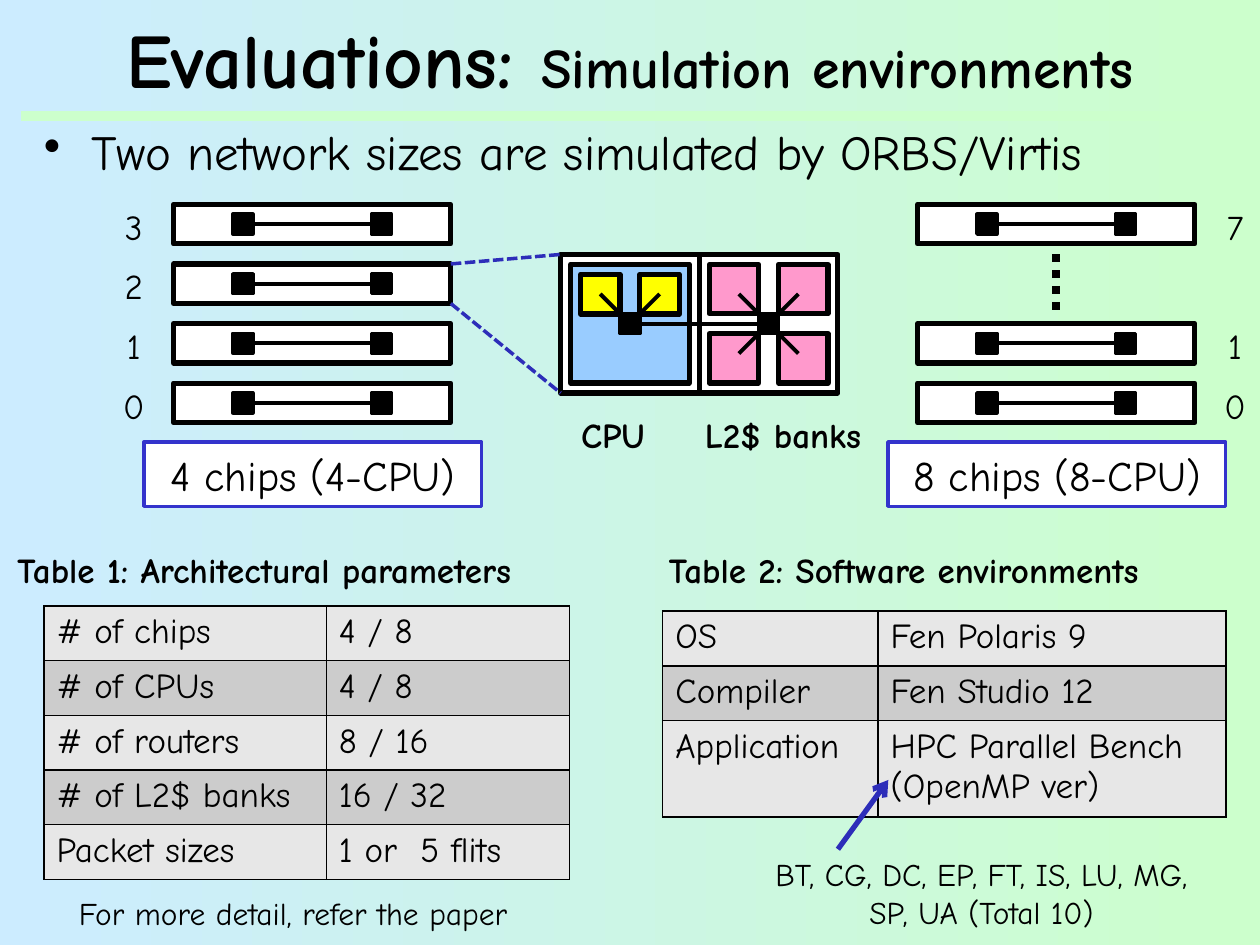
import pptx
import pptx.dml.color
import pptx.enum.dml
import pptx.enum.shapes
import pptx.enum.text
import pptx.oxml.ns
import pptx.util
from lxml import etree

Pt = pptx.util.Pt
ALIGN = pptx.enum.text.PP_ALIGN
ANCHOR = pptx.enum.text.MSO_ANCHOR
DASH = pptx.enum.dml.MSO_LINE
FONT = "Comic Neue"
BLACK, WHITE, BLUE = "000000", "FFFFFF", "2D2DB9"

CHIP_TOP, CHIP_PITCH, CHIP_WIDTH, CHIP_HEIGHT = 116.8, 34.05, 158.4, 22.6
ROUTER = 11.4
LEFT_STACK, RIGHT_STACK = 99.2, 524.4
TILE_LEFT, TILE_TOP, TILE = 320.4, 145.4, 79.2


def color(hex_string):
    return pptx.dml.color.RGBColor.from_string(hex_string)


def add_xml(parent, tag, **attributes):
    return etree.SubElement(parent, pptx.oxml.ns.qn(tag), attributes)


def set_font(paragraph, size, bold=False):
    paragraph.font.name = FONT
    paragraph.font.size = Pt(size)
    paragraph.font.bold = bold
    paragraph.font.color.rgb = color(BLACK)


def add_text(slide, text, left, top, width, height, size, bold=False, align=ALIGN.CENTER):
    box = slide.shapes.add_textbox(Pt(left), Pt(top), Pt(width), Pt(height))
    box.text_frame.word_wrap = True
    paragraph = box.text_frame.paragraphs[0]
    paragraph.text = text
    paragraph.alignment = align
    set_font(paragraph, size, bold)
    return box


def add_box(shapes, left, top, width, height, fill, line=BLACK, weight=3):
    shape = shapes.add_shape(pptx.enum.shapes.MSO_SHAPE.RECTANGLE,
                             Pt(left), Pt(top), Pt(width), Pt(height))
    shape.shadow.inherit = False
    shape.fill.solid()
    shape.fill.fore_color.rgb = color(fill)
    shape.line.color.rgb = color(line)
    shape.line.width = Pt(weight)
    return shape


def add_line(shapes, x1, y1, x2, y2, line=BLACK, weight=2.25, dash=None, arrow=False):
    connector = shapes.add_connector(pptx.enum.shapes.MSO_CONNECTOR.STRAIGHT,
                                     Pt(x1), Pt(y1), Pt(x2), Pt(y2))
    connector.line.color.rgb = color(line)
    connector.line.width = Pt(weight)
    if dash:
        connector.line.dash_style = dash
    if arrow:
        add_xml(connector.line._get_or_add_ln(), "a:tailEnd", type="arrow")
    add_xml(connector._element.spPr, "a:effectLst")


def add_router(shapes, center_x, center_y):
    add_box(shapes, center_x - ROUTER / 2, center_y - ROUTER / 2, ROUTER, ROUTER, BLACK, weight=2)


def add_chip(slide, left, top):
    shapes = slide.shapes.add_group_shape().shapes
    add_box(shapes, left, top, CHIP_WIDTH, CHIP_HEIGHT, WHITE)
    center_y = top + CHIP_HEIGHT / 2
    routers = left + CHIP_WIDTH / 4, left + CHIP_WIDTH * 3 / 4
    for center_x in routers:
        add_router(shapes, center_x, center_y)
    add_line(shapes, routers[0], center_y, routers[1], center_y)


def add_stack(slide, left, label_left, labels, caption):
    caption_box = add_box(slide.shapes, left - 17, 252.6, 193, 36.8, WHITE, "3333CC", 2)
    paragraph = caption_box.text_frame.paragraphs[0]
    paragraph.text = caption
    paragraph.alignment = ALIGN.CENTER
    set_font(paragraph, 24)
    for row, label in enumerate(labels):
        if label:
            top = CHIP_TOP + row * CHIP_PITCH
            add_chip(slide, left, top)
            add_text(slide, label, label_left, top - 3, 45, 31.5, 20)


def add_chip_detail(slide):
    shapes = slide.shapes.add_group_shape().shapes
    gap, bank, core = 5.7, 28.2, 22.6
    center_y = TILE_TOP + TILE / 2
    cpu_x, cache_x = TILE_LEFT + TILE / 2, TILE_LEFT + TILE * 3 / 2

    # CPU tile with two cores
    add_box(shapes, TILE_LEFT, TILE_TOP, TILE, TILE, WHITE)
    add_box(shapes, TILE_LEFT + gap, TILE_TOP + gap, TILE - 2 * gap, TILE - 2 * gap, "99CCFF")
    for core_left in (TILE_LEFT + 2 * gap, TILE_LEFT + TILE - 2 * gap - core):
        add_box(shapes, core_left, TILE_TOP + 2 * gap, core, core, "FFFF00")

    # Cache tile with four banks
    add_box(shapes, TILE_LEFT + TILE, TILE_TOP, TILE, TILE, WHITE)
    offsets = gap, TILE - gap - bank
    for dy in offsets:
        for dx in offsets:
            add_box(shapes, TILE_LEFT + TILE + dx, TILE_TOP + dy, bank, bank, "FF99CC")

    # Routers and links
    for center_x in (cpu_x, cache_x):
        add_router(shapes, center_x, center_y)
    add_line(shapes, cpu_x, center_y, cache_x, center_y)
    reach = 17
    for side in (-reach, reach):
        add_line(shapes, cpu_x + side, center_y - reach, cpu_x, center_y)
        add_line(shapes, cache_x + side, center_y - reach, cache_x - side, center_y + reach)


def add_borders(cell):
    properties = cell._tc.get_or_add_tcPr()
    for tag in ("a:lnL", "a:lnR", "a:lnT", "a:lnB"):
        border = add_xml(properties, tag, w=str(Pt(1)))
        add_xml(add_xml(border, "a:solidFill"), "a:srgbClr", val=BLACK)


def add_table(slide, left, top, widths, heights, rows):
    table = slide.shapes.add_table(len(rows), len(widths), Pt(left), Pt(top),
                                   Pt(sum(widths)), Pt(sum(heights))).table
    table.first_row = table.horz_banding = False
    for column, width in zip(table.columns, widths):
        column.width = Pt(width)
    for index, (row, height, texts) in enumerate(zip(table.rows, heights, rows)):
        row.height = Pt(height)
        for cell, text in zip(row.cells, texts):
            add_borders(cell)
            cell.fill.solid()
            cell.fill.fore_color.rgb = color("CCCCCC" if index % 2 else "E7E7E7")
            cell.text = text
            for paragraph in cell.text_frame.paragraphs:
                set_font(paragraph, 20)


def set_background(slide):
    fill = slide.background.fill
    fill.gradient()
    fill.gradient_angle = 0
    for stop, position, shade in zip(fill.gradient_stops, (0, 1), ("CCECFF", "CCFFCC")):
        stop.position = position
        stop.color.rgb = color(shade)


def add_heading(slide):
    add_line(slide.shapes, 12.2, 66.2, 714, 66.2, "CCFFCC", 6)
    title = add_text(slide, "Evaluations: ", 18, 6, 684, 54, 44, bold=True)
    title.text_frame.vertical_anchor = ANCHOR.MIDDLE
    subtitle = title.text_frame.paragraphs[0].add_run()
    subtitle.text = "Simulation environments"
    subtitle.font.size = Pt(32)

    body = add_text(slide, "Two network sizes are simulated by ORBS/Virtis",
                    18, 66.2, 702, 45, 28, align=ALIGN.LEFT)
    properties = body.text_frame.paragraphs[0]._p.get_or_add_pPr()
    properties.set("marL", str(Pt(27)))
    properties.set("indent", str(Pt(-27)))
    bullet = properties.makeelement(pptx.oxml.ns.qn("a:buChar"), {"char": "•"})
    properties.insert(0, bullet)


def main():
    presentation = pptx.Presentation()
    presentation.slide_width, presentation.slide_height = Pt(720), Pt(540)
    slide = presentation.slides.add_slide(presentation.slide_layouts[6])
    set_background(slide)
    add_heading(slide)

    # Chip stacks, with dots for the chips left out on the right
    add_stack(slide, LEFT_STACK, 54, ["3", "2", "1", "0"], "4 chips (4-CPU)")
    add_stack(slide, RIGHT_STACK, 683.3, ["7", None, "1", "0"], "8 chips (8-CPU)")
    dots_x = RIGHT_STACK + CHIP_WIDTH / 2
    add_line(slide.shapes, dots_x, 145.4, dots_x, 179.4, weight=4.5, dash=DASH.ROUND_DOT)

    # Enlarged chip
    add_chip_detail(slide)
    chip_right, chip_top = LEFT_STACK + CHIP_WIDTH, CHIP_TOP + CHIP_PITCH
    for start, end in ((chip_top, TILE_TOP), (chip_top + CHIP_HEIGHT, TILE_TOP + TILE)):
        add_line(slide.shapes, chip_right, start, TILE_LEFT, end, BLUE, 2, DASH.SQUARE_DOT)
    add_text(slide, "CPU", 320.4, 232.6, 59.8, 31.5, 20, bold=True)
    add_text(slide, "L2$ banks", 388.1, 232.6, 118.8, 31.5, 20, bold=True)

    # Tables
    add_text(slide, "Table 1: Architectural parameters", 2.9, 309.6, 355.7, 31.5, 20, True, ALIGN.LEFT)
    add_table(slide, 25.2, 346.3, [161.3, 139], [31.25] * 5, [
        ("# of chips", "4 / 8"),
        ("# of CPUs", "4 / 8"),
        ("# of routers", "8 / 16"),
        ("# of L2$ banks", "16 / 32"),
        ("Packet sizes", "1 or  5 flits"),
    ])
    add_text(slide, "Table 2: Software environments", 375.1, 309.6, 331.2, 31.5, 20, True, ALIGN.LEFT)
    add_table(slide, 378.7, 349.2, [123.1, 198.7], [31.25, 31.25, 55], [
        ("OS", "Fen Polaris 9"),
        ("Compiler", "Fen Studio 12"),
        ("Application", "HPC Parallel Bench\n(OpenMP ver)"),
    ])

    # Notes under the tables
    add_text(slide, "BT, CG, DC, EP, FT, IS, LU, MG, SP, UA (Total 10)", 433.4, 485.3, 254.9, 51, 18)
    add_line(slide.shapes, 478.8, 485.3, 507.6, 445.7, BLUE, 3, arrow=True)
    add_text(slide, "For more detail, refer the paper", 20.2, 507.6, 294.5, 28.8, 18)

    presentation.save("out.pptx")


if __name__ == "__main__":
    main()
